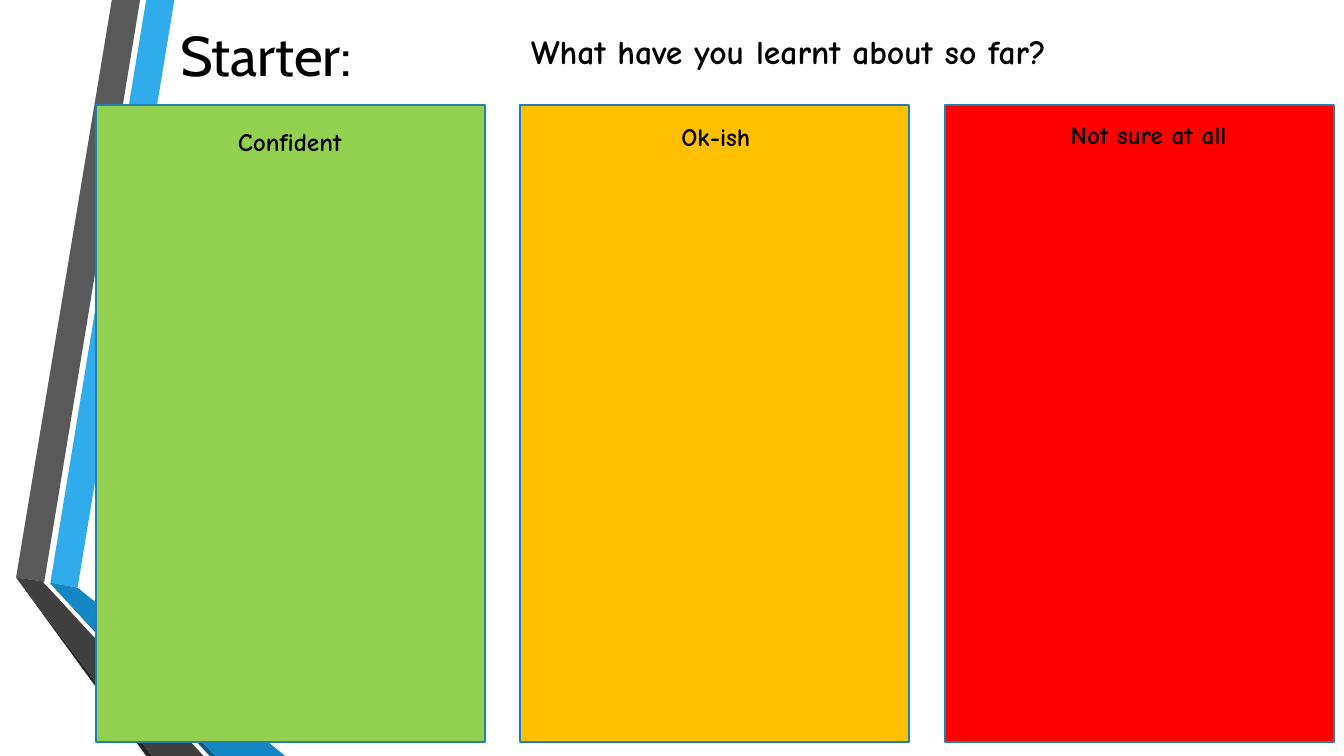
from dataclasses import dataclass

from pptx import Presentation
from pptx import util as u
from pptx.dml.color import RGBColor
from pptx.enum import shapes, text

HEADING_FONT = "Cabin"
BODY_FONT = "Comic Neue"
BLACK = "000000"
CARD_BORDER = "247FAF"
CARD_LEFT, CARD_TOP = 0.95, 1.04
CARD_WIDTH, CARD_HEIGHT = 3.86, 6.32
CARD_STEP = 4.21
UNITS_PER_INCH = 100


@dataclass
class Ribbon:
    color: str
    points: list[tuple[float, float]]


@dataclass
class Label:
    wording: str
    left: float
    top: float
    width: float
    height: float = 0.4
    size: int = 18
    wrap: bool = False


@dataclass
class Card:
    color: str
    label: Label


RIBBONS = [
    Ribbon("30ACEC", [(0.5, 5.78), (0.77, 5.83), (1.73, 0), (1.45, 0)]),
    Ribbon("595959", [(1.39, 0), (1.11, 0), (0.16, 5.73), (0.44, 5.77)]),
    Ribbon("262626", [(0.16, 5.73), (1.45, 7.5), (1.51, 7.5)]),
    Ribbon("0C5A82", [(0.5, 5.79), (2.08, 7.5), (2.14, 7.5)]),
    Ribbon("1287C3", [(0.5, 5.79), (2.14, 7.5), (2.83, 7.5), (0.77, 5.83), (0.5, 5.78)]),
    Ribbon("404040", [(2.02, 7.5), (0.48, 5.83), (0.43, 5.78), (0.44, 5.77),
                      (0.16, 5.73), (1.51, 7.5)]),
]
CARDS = [
    Card("92D050", Label("Confident", 2.26, 1.2, 1.35)),
    Card("FFC000", Label("Ok-ish", 6.66, 1.15, 0.99)),
    Card("FF0000", Label("Not sure at all", 10.52, 1.13, 1.97)),
]
QUESTION = Label("What have you learnt about so far?", 5.17, 0.26, 7.32, 0.5, 24, True)


def paint(color_format, color: str) -> None:
    color_format.rgb = RGBColor.from_string(color)


def fill_shape(shape, color: str) -> None:
    shape.shadow.inherit = False
    shape.fill.solid()
    paint(shape.fill.fore_color, color)


def style_text(frame, font_name: str, size: int, bold: bool) -> None:
    for run in frame.paragraphs[0].runs:
        run.font.name = font_name
        run.font.size = u.Pt(size)
        run.font.bold = bold
        paint(run.font.color, BLACK)


def draw_ribbon(slide, ribbon: Ribbon) -> None:
    corners = [(round(x * UNITS_PER_INCH), round(y * UNITS_PER_INCH)) for x, y in ribbon.points]
    builder = slide.shapes.build_freeform(*corners[0], scale=u.Inches(1) / UNITS_PER_INCH)
    builder.add_line_segments(corners[1:], close=True)
    band = builder.convert_to_shape()
    fill_shape(band, ribbon.color)
    band.line.fill.background()


def draw_card(slide, card: Card, column: int) -> None:
    panel = slide.shapes.add_shape(
        shapes.MSO_SHAPE.RECTANGLE,
        u.Inches(CARD_LEFT + column * CARD_STEP), u.Inches(CARD_TOP),
        u.Inches(CARD_WIDTH), u.Inches(CARD_HEIGHT))
    fill_shape(panel, card.color)
    paint(panel.line.color, CARD_BORDER)
    panel.line.width = u.Pt(1.25)


def draw_label(slide, label: Label) -> None:
    caption = slide.shapes.add_textbox(
        u.Inches(label.left), u.Inches(label.top), u.Inches(label.width), u.Inches(label.height))
    frame = caption.text_frame
    frame.text = label.wording
    frame.word_wrap = label.wrap
    frame.auto_size = text.MSO_AUTO_SIZE.SHAPE_TO_FIT_TEXT
    style_text(frame, BODY_FONT, label.size, True)


def set_heading(slide) -> None:
    heading = slide.shapes.title
    heading.left, heading.top = u.Inches(-2.61), u.Inches(-0.27)
    heading.width, heading.height = u.Inches(10.5), u.Inches(1.62)
    frame = heading.text_frame
    frame.text = "Starter:"
    frame.vertical_anchor = text.MSO_ANCHOR.MIDDLE
    frame.paragraphs[0].alignment = text.PP_ALIGN.CENTER
    style_text(frame, HEADING_FONT, 40, False)


def main() -> None:
    deck = Presentation()
    deck.slide_width, deck.slide_height = u.Inches(13.33), u.Inches(7.5)
    slide = deck.slides.add_slide(deck.slide_layouts[5])
    for ribbon in RIBBONS:
        draw_ribbon(slide, ribbon)
    set_heading(slide)
    for column, card in enumerate(CARDS):
        draw_card(slide, card, column)
    for label in [QUESTION, *(card.label for card in CARDS)]:
        draw_label(slide, label)
    deck.save("out.pptx")


if __name__ == "__main__":
    main()
